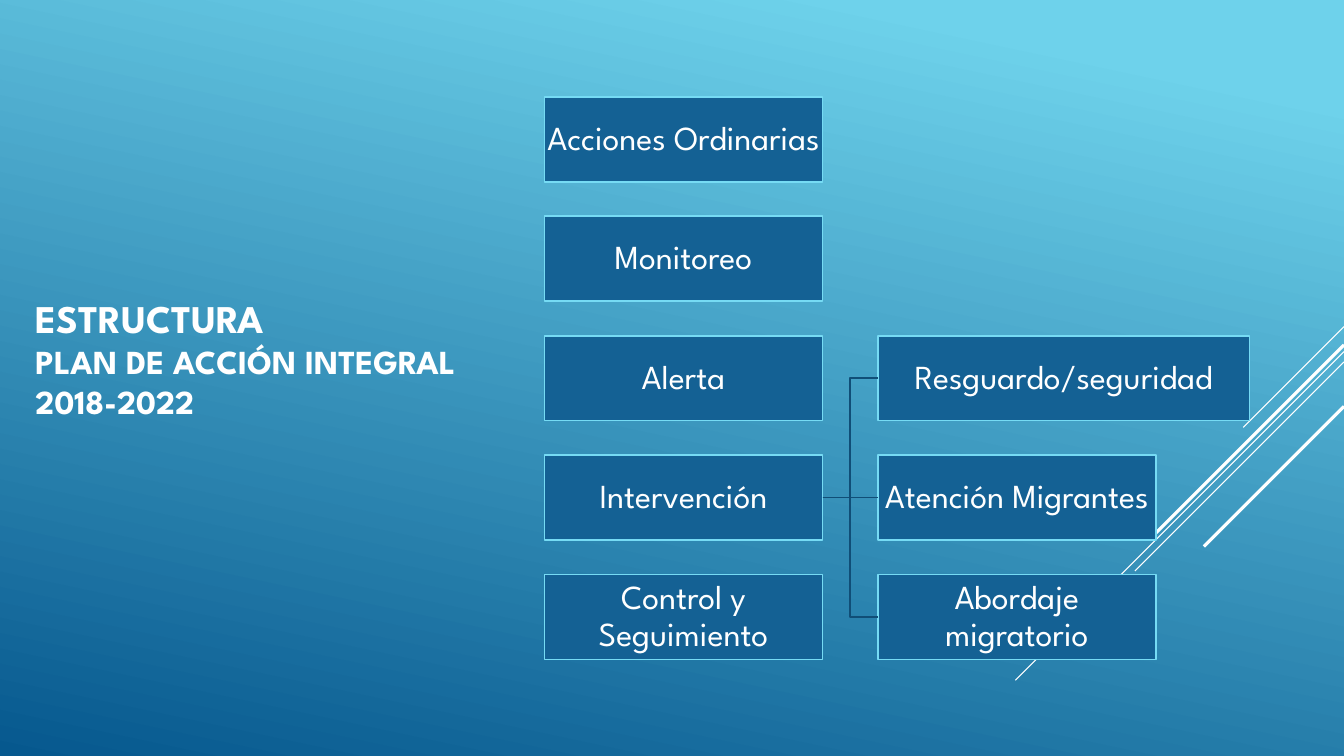
"""Build the structure slide of the 2018-2022 integral action plan."""
import dataclasses
import typing

import pptx
import pptx.dml.color
import pptx.enum.shapes
import pptx.enum.text
import pptx.oxml
import pptx.oxml.ns
import pptx.util

Cm = pptx.util.Cm
Pt = pptx.util.Pt
CONNECTOR = pptx.enum.shapes.MSO_CONNECTOR

COLOURS = {
    "sky": "6ED2EB",
    "deep": "06588E",
    "text": "FFFFFF",
    "box": "146194",
    "border": "76DBF4",
    "branch": "104E77",
}
FONT = "League Spartan"
SLIDE_WIDTH, SLIDE_HEIGHT = 33.87, 19.05
COLUMN_LEFTS = (13.72, 22.12)
FIRST_TOP, ROW_PITCH = 2.44, 3.01
BOX_WIDTH, BOX_HEIGHT = 7.01, 2.14
RIGHT_SITE, LEFT_SITE = 3, 1


@dataclasses.dataclass(frozen=True)
class Box:
    """A labelled box in the grid of the diagram."""

    label: str
    column: int
    row: int
    width: float = BOX_WIDTH


@dataclasses.dataclass(frozen=True)
class Ray:
    """A diagonal line that falls from the right edge at 45 degrees."""

    top: float
    run: float
    weight: float


BOXES = (
    Box("Acciones Ordinarias", 0, 0),
    Box("Monitoreo", 0, 1),
    Box("Alerta", 0, 2),
    Box("Intervención", 0, 3),
    Box("Control y Seguimiento", 0, 4),
    Box("Resguardo/seguridad", 1, 2, 9.37),
    Box("Atención Migrantes", 1, 3),
    Box("Abordaje migratorio", 1, 4),
)
BRANCHES = (
    ("Resguardo/seguridad", CONNECTOR.ELBOW),
    ("Atención Migrantes", CONNECTOR.STRAIGHT),
    ("Abordaje migratorio", CONNECTOR.ELBOW),
)
RAYS = (
    Ray(8.23, 2.54, 0.75),
    Ray(8.86, 8.28, 0.75),
    Ray(9.12, 5.27, 0.75),
    Ray(8.69, 4.85, 2.25),
    Ray(10.24, 3.53, 2.25),
)
TITLE_LINES = (("ESTRUCTURA", 28), ("PLAN DE ACCIÓN INTEGRAL", 24), ("2018-2022", 24))


def colour(name: str) -> pptx.dml.color.RGBColor:
    """Return a named colour."""
    return pptx.dml.color.RGBColor.from_string(COLOURS[name])


def assign(target: typing.Any, values: dict[str, typing.Any]) -> None:
    """Set each format value on the target."""
    for name, value in values.items():
        setattr(target, name, value)


def format_font(font: typing.Any, size: float, bold: bool) -> None:
    """Give a font the look of the slide."""
    assign(font, {"name": FONT, "size": Pt(size), "bold": bold})
    font.color.rgb = colour("text")


def format_line(line: typing.Any, name: str, weight: float) -> None:
    """Set the colour and weight of a line."""
    line.color.rgb = colour(name)
    line.width = Pt(weight)


def draw_background(slide: typing.Any) -> None:
    """Fill the background with the blue gradient."""
    fill = slide.background.fill
    fill.gradient()
    fill.gradient_angle = 258
    for stop, (name, position) in zip(fill.gradient_stops, (("sky", 0.1), ("deep", 1.0))):
        stop.color.rgb = colour(name)
        stop.position = position


def draw_title(slide: typing.Any) -> None:
    """Place and fill the title placeholder."""
    title = slide.shapes.title
    assign(title, {"left": Cm(0.64), "top": Cm(1.93), "width": Cm(12.29), "height": Cm(14.17)})
    assign(title.text_frame, {
        "vertical_anchor": pptx.enum.text.MSO_ANCHOR.MIDDLE,
        "word_wrap": True,
        "auto_size": pptx.enum.text.MSO_AUTO_SIZE.NONE,
    })
    paragraph = title.text_frame.paragraphs[0]
    paragraph.alignment = pptx.enum.text.PP_ALIGN.LEFT
    for index, (text, size) in enumerate(TITLE_LINES):
        if index:
            paragraph.add_line_break()
        run = paragraph.add_run()
        run.text = text
        format_font(run.font, size, True)


def draw_connector(slide: typing.Any, kind: typing.Any, ends: tuple[float, float, float, float],
                   name: str, weight: float) -> typing.Any:
    """Draw a connector without a shadow."""
    connector = slide.shapes.add_connector(kind, *map(Cm, ends))
    format_line(connector.line, name, weight)
    properties = connector._element.spPr
    properties.append(pptx.oxml.parse_xml(f"<a:effectLst {pptx.oxml.ns.nsdecls('a')}/>"))
    return connector


def draw_ray(slide: typing.Any, ray: Ray) -> None:
    """Draw one diagonal line of the corner decoration."""
    ends = (SLIDE_WIDTH, ray.top, SLIDE_WIDTH - ray.run, ray.top + ray.run)
    draw_connector(slide, CONNECTOR.STRAIGHT, ends, "text", ray.weight)


def draw_box(slide: typing.Any, box: Box) -> typing.Any:
    """Draw one labelled box."""
    shape = slide.shapes.add_shape(
        pptx.enum.shapes.MSO_SHAPE.RECTANGLE,
        Cm(COLUMN_LEFTS[box.column]), Cm(FIRST_TOP + box.row * ROW_PITCH),
        Cm(box.width), Cm(BOX_HEIGHT),
    )
    shape.shadow.inherit = False
    shape.fill.solid()
    shape.fill.fore_color.rgb = colour("box")
    format_line(shape.line, "border", 1.25)
    margins = ("margin_left", "margin_top", "margin_right", "margin_bottom")
    assign(shape.text_frame, dict.fromkeys(margins, Cm(0.04)) | {
        "word_wrap": True,
        "vertical_anchor": pptx.enum.text.MSO_ANCHOR.MIDDLE,
    })
    paragraph = shape.text_frame.paragraphs[0]
    assign(paragraph, {"alignment": pptx.enum.text.PP_ALIGN.CENTER, "line_spacing": 0.9})
    run = paragraph.add_run()
    run.text = box.label
    format_font(run.font, 24, False)
    return shape


def main() -> None:
    """Build and save the presentation."""
    presentation = pptx.Presentation()
    assign(presentation, {"slide_width": Cm(SLIDE_WIDTH), "slide_height": Cm(SLIDE_HEIGHT)})
    slide = presentation.slides.add_slide(presentation.slide_layouts.get_by_name("Title Only"))
    draw_background(slide)
    draw_title(slide)
    for ray in RAYS:
        draw_ray(slide, ray)
    shapes = {box.label: draw_box(slide, box) for box in BOXES}
    for label, kind in BRANCHES:
        connector = draw_connector(slide, kind, (0, 0, 1, 1), "branch", 1.25)
        connector.begin_connect(shapes["Intervención"], RIGHT_SITE)
        connector.end_connect(shapes[label], LEFT_SITE)
    presentation.save("out.pptx")


if __name__ == "__main__":
    main()
